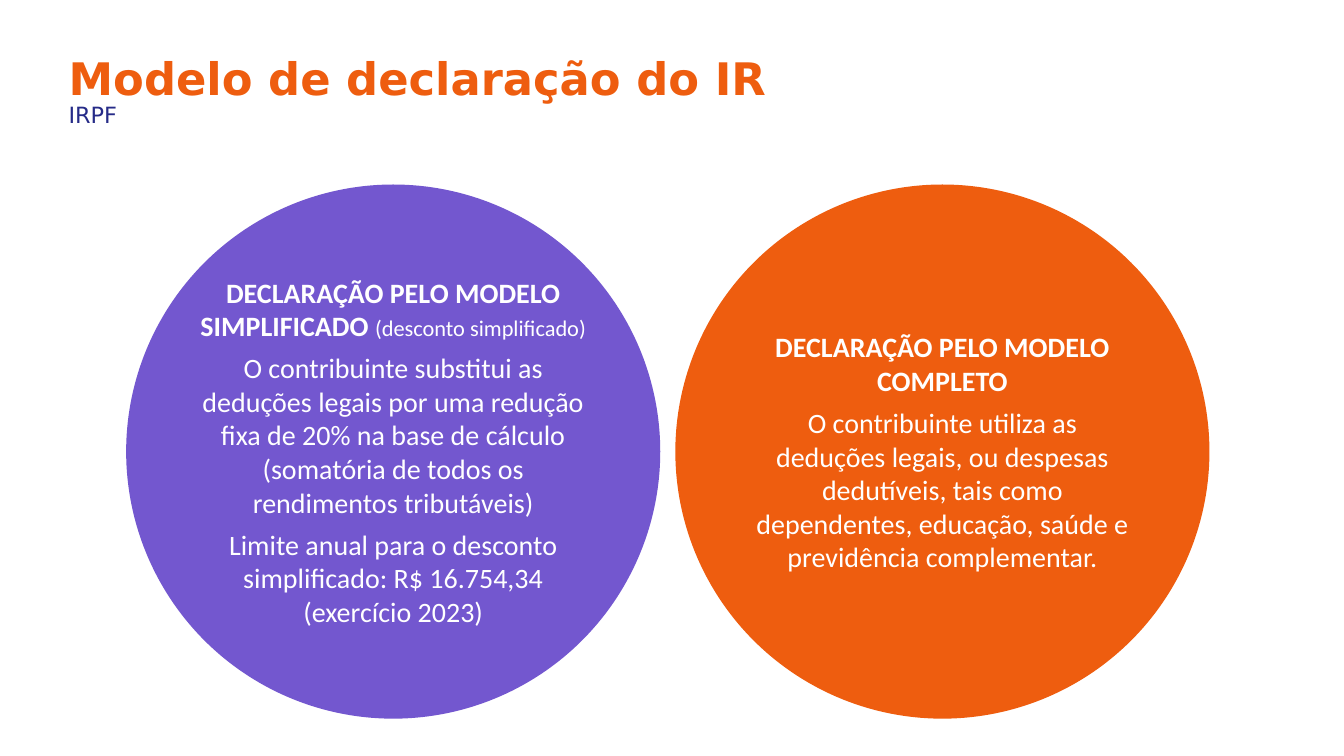
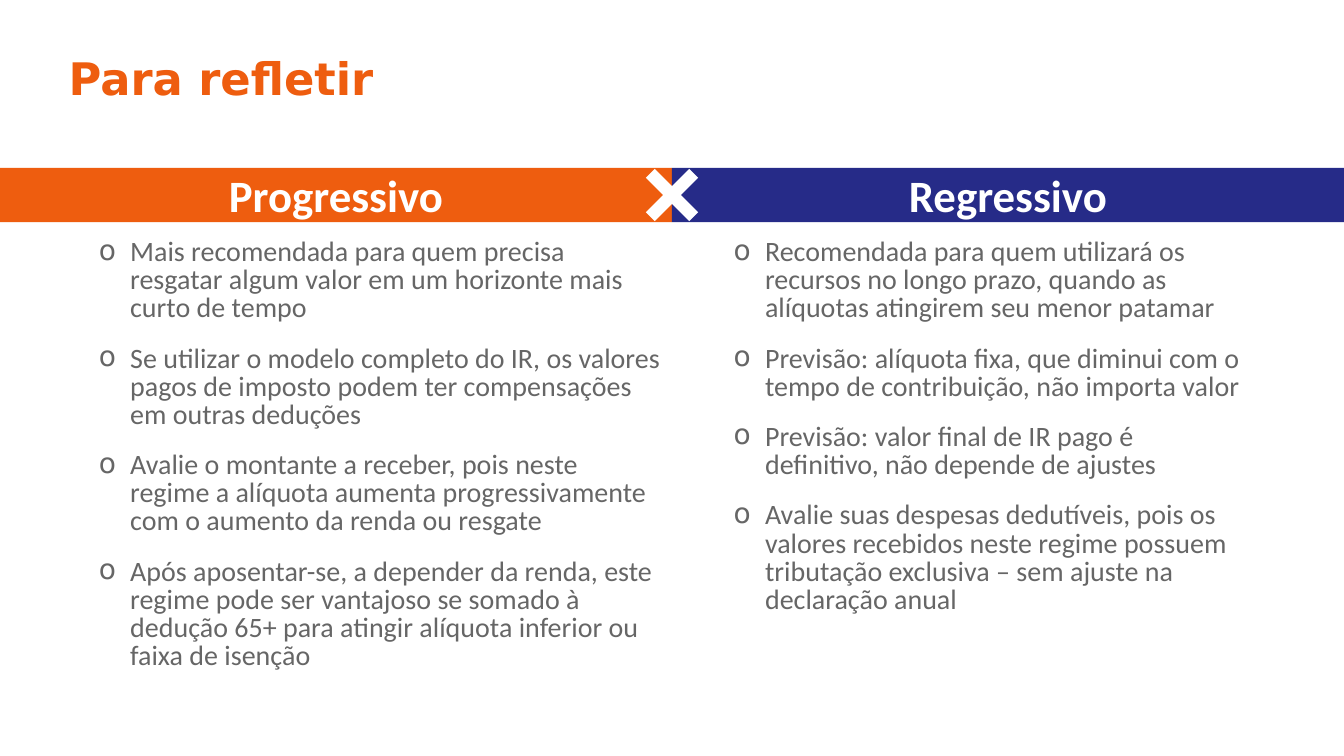
from dataclasses import dataclass, field

import lxml.etree
import pptx
import pptx.dml.color
import pptx.enum.shapes
import pptx.enum.text
import pptx.oxml.ns
import pptx.util

Cm = pptx.util.Cm
Pt = pptx.util.Pt
SHAPE = pptx.enum.shapes.MSO_SHAPE
ALIGN = pptx.enum.text.PP_ALIGN
ANCHOR = pptx.enum.text.MSO_ANCHOR


def rgb(value):
    return pptx.dml.color.RGBColor.from_string(value)


def font(name, size, color, bold=False):
    return {"name": name, "size": Pt(size), "bold": bold, "color": rgb(color)}


@dataclass(frozen=True)
class Theme:
    orange: str = "EE5D0F"
    purple: str = "7357CF"
    navy: str = "262B88"
    white: str = "FFFFFF"
    bullet_font: str = "DejaVu Sans"
    title: dict = field(default_factory=lambda: font("DejaVu Sans", 32, "EE5D0F", True))
    subtitle: dict = field(default_factory=lambda: font("DejaVu Sans", 16, "262B88"))
    band: dict = field(default_factory=lambda: font("Calibri", 32, "FFFFFF", True))
    strong: dict = field(default_factory=lambda: font("Calibri", 20, "FFFFFF", True))
    plain: dict = field(default_factory=lambda: font("Calibri", 20, "FFFFFF"))
    small: dict = field(default_factory=lambda: font("Calibri", 16, "FFFFFF"))
    item: dict = field(default_factory=lambda: font("Calibri", 20, "666666"))


THEME = Theme()
SLIDE_WIDTH = Cm(33.87)
SLIDE_HEIGHT = Cm(19.05)
MARGIN = Cm(1.73)
HALF = SLIDE_WIDTH // 2

MODELS = [
    (THEME.purple, Cm(10.6), [
        [("DECLARAÇÃO PELO MODELO SIMPLIFICADO ", THEME.strong),
         ("(desconto simplificado)", THEME.small)],
        [("O contribuinte substitui as deduções legais por uma redução fixa de 20% "
          "na base de cálculo (somatória de todos os rendimentos tributáveis)", THEME.plain)],
        [("Limite anual para o desconto simplificado: R$ 16.754,34 (exercício 2023)",
          THEME.plain)],
    ]),
    (THEME.orange, Cm(10), [
        [("DECLARAÇÃO PELO MODELO COMPLETO", THEME.strong)],
        [("O contribuinte utiliza as deduções legais, ou despesas dedutíveis, tais como "
          "dependentes, educação, saúde e previdência complementar.", THEME.plain)],
    ]),
]

REGIMES = [
    ("Progressivo", THEME.orange, Cm(2.24), Cm(14.7), [
        "Mais recomendada para quem precisa resgatar algum valor em um horizonte mais "
        "curto de tempo",
        "Se utilizar o modelo completo do IR, os valores pagos de imposto podem ter "
        "compensações em outras deduções",
        "Avalie o montante a receber, pois neste regime a alíquota aumenta "
        "progressivamente com o aumento da renda ou resgate",
        "Após aposentar-se, a depender da renda, este regime pode ser vantajoso se somado "
        "à dedução 65+ para atingir alíquota inferior ou faixa de isenção",
    ]),
    ("Regressivo", THEME.navy, Cm(18.24), Cm(13.34), [
        "Recomendada para quem utilizará os recursos no longo prazo, quando as alíquotas "
        "atingirem seu menor patamar",
        "Previsão: alíquota fixa, que diminui com o tempo de contribuição, não importa valor",
        "Previsão: valor final de IR pago é definitivo, não depende de ajustes",
        "Avalie suas despesas dedutíveis, pois os valores recebidos neste regime possuem "
        "tributação exclusiva – sem ajuste na declaração anual",
    ]),
]


def apply(target, values):
    for name, value in values.items():
        setattr(target, name, value)


def place(shape, left, top, width, height):
    apply(shape, {"left": left, "top": top, "width": width, "height": height})


def add_run(paragraph, text, style):
    run = paragraph.add_run()
    run.text = text
    for name, value in style.items():
        if name == "color":
            run.font.color.rgb = value
        else:
            setattr(run.font, name, value)


def set_bullet(paragraph, hang, character=None):
    properties = paragraph._p.get_or_add_pPr()
    properties.set("marL", str(hang))
    properties.set("indent", str(-hang))
    marks = [("a:buFont", "typeface", THEME.bullet_font), ("a:buChar", "char", character)]
    for tag, name, value in marks if character else [("a:buNone", None, None)]:
        mark = lxml.etree.SubElement(properties, pptx.oxml.ns.qn(tag))
        if name:
            mark.set(name, value)


def format_frame(frame, anchor, inset=0):
    sides = ("margin_left", "margin_right", "margin_top", "margin_bottom")
    apply(frame, dict.fromkeys(sides, inset))
    apply(frame, {"word_wrap": True, "vertical_anchor": anchor,
                  "auto_size": pptx.enum.text.MSO_AUTO_SIZE.NONE})


def write_paragraphs(frame, paragraphs, gap, **values):
    for index, runs in enumerate(paragraphs):
        paragraph = frame.add_paragraph() if index else frame.paragraphs[0]
        apply(paragraph, {"space_before": gap if index else Pt(0), **values})
        for text, style in runs:
            add_run(paragraph, text, style)


def add_filled(slide, kind, box, color):
    shape = slide.shapes.add_shape(kind, *box)
    shape.shadow.inherit = False
    shape.fill.solid()
    shape.fill.fore_color.rgb = rgb(color)
    shape.line.fill.background()
    return shape


def add_titled_slide(deck, layout, title):
    slide = deck.slides.add_slide(deck.slide_layouts.get_by_name(layout))
    heading = slide.shapes.title
    place(heading, MARGIN, Cm(1.27), Cm(24), Cm(1.37))
    format_frame(heading.text_frame, ANCHOR.MIDDLE)
    write_paragraphs(heading.text_frame, [[(title, THEME.title)]], Pt(0),
                     alignment=ALIGN.LEFT)
    return slide


def add_subtitle(slide, text):
    subtitle = slide.placeholders[1]
    place(subtitle, MARGIN, Cm(2.54), Cm(21.5), Cm(0.7))
    format_frame(subtitle.text_frame, ANCHOR.TOP)
    set_bullet(subtitle.text_frame.paragraphs[0], 0)
    write_paragraphs(subtitle.text_frame, [[(text, THEME.subtitle)]], Pt(0))


def add_model(slide, left, color, text_width, paragraphs):
    top, diameter = Cm(4.65), Cm(13.46)
    add_filled(slide, SHAPE.OVAL, (left, top, diameter, diameter), color)
    description = slide.shapes.add_textbox(
        left + (diameter - text_width) // 2, top, text_width, diameter)
    format_frame(description.text_frame, ANCHOR.MIDDLE, Cm(0.25))
    write_paragraphs(description.text_frame, paragraphs, Pt(6), alignment=ALIGN.CENTER)


def add_band(slide, left, top, height, text, color):
    band = add_filled(slide, SHAPE.RECTANGLE, (left, top, HALF, height), color)
    format_frame(band.text_frame, ANCHOR.MIDDLE)
    write_paragraphs(band.text_frame, [[(text, THEME.band)]], Pt(0),
                     alignment=ALIGN.CENTER)


def add_list(advice, left, width, items):
    place(advice, left, Cm(5.9), width, Cm(11.4))
    format_frame(advice.text_frame, ANCHOR.TOP, Cm(0.25))
    advice.text_frame.margin_top = Cm(0.13)
    write_paragraphs(advice.text_frame, [[(item, THEME.item)] for item in items],
                     Pt(16), line_spacing=Pt(20))
    for paragraph in advice.text_frame.paragraphs:
        set_bullet(paragraph, Cm(0.79), "o")


def build_models(deck):
    slide = add_titled_slide(deck, "Title and Content", "Modelo de declaração do IR")
    add_subtitle(slide, "IRPF")
    for index, model in enumerate(MODELS):
        add_model(slide, Cm(3.18) + index * Cm(13.84), *model)


def build_regimes(deck):
    slide = add_titled_slide(deck, "Two Content", "Para refletir")
    top, height, cross_size = Cm(4.23), Cm(1.37), Cm(2.1)
    for index, (name, color, left, width, items) in enumerate(REGIMES):
        add_band(slide, index * HALF, top, height, name, color)
        add_list(slide.placeholders[index + 1], left, width, items)
    cross = add_filled(slide, SHAPE.MATH_MULTIPLY,
                       (HALF - cross_size // 2, top + (height - cross_size) // 2,
                        cross_size, cross_size), THEME.white)
    cross.adjustments[0] = 0.15


def main():
    deck = pptx.Presentation()
    apply(deck, {"slide_width": SLIDE_WIDTH, "slide_height": SLIDE_HEIGHT})
    build_models(deck)
    build_regimes(deck)
    deck.save("out.pptx")


if __name__ == "__main__":
    main()
